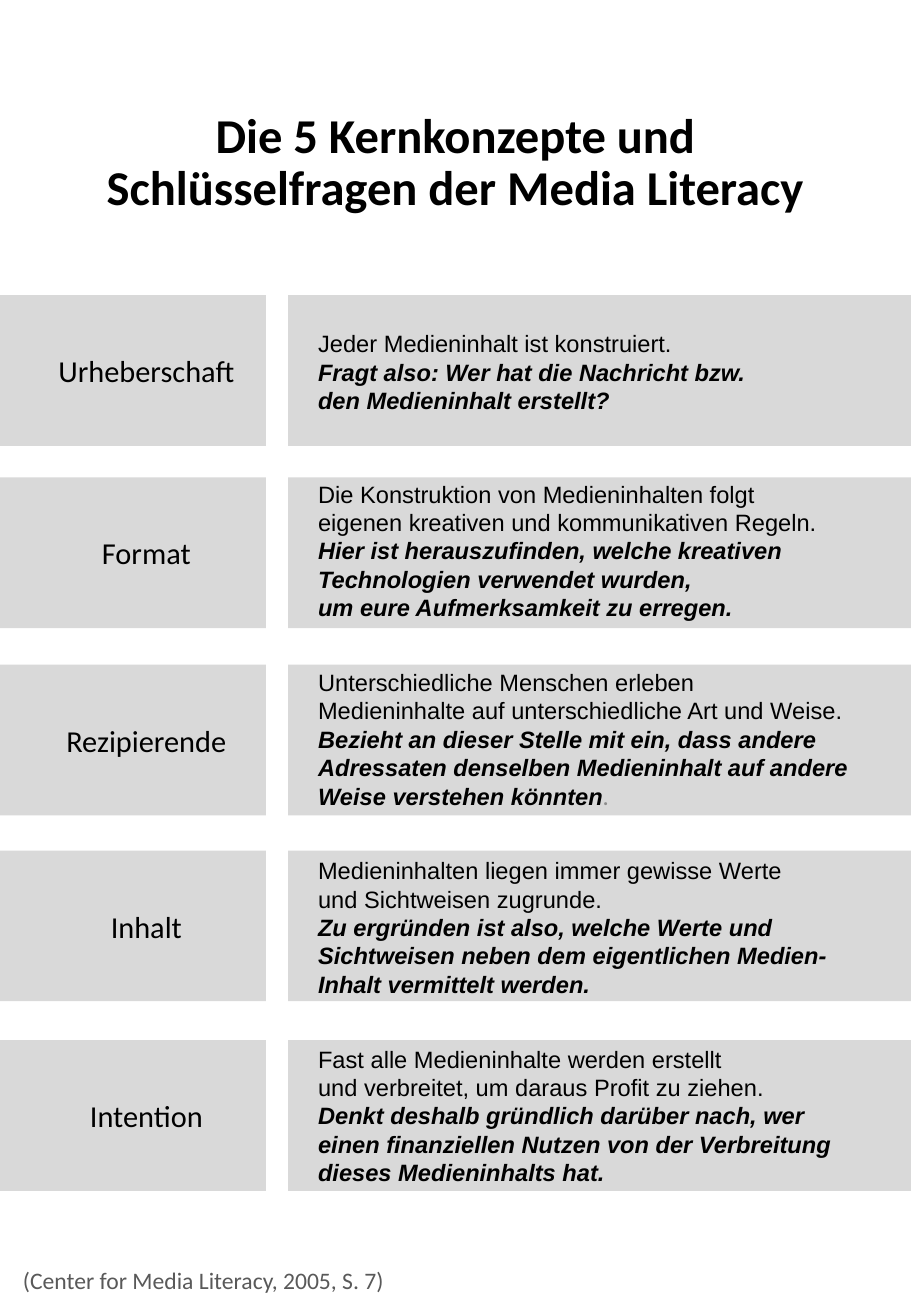
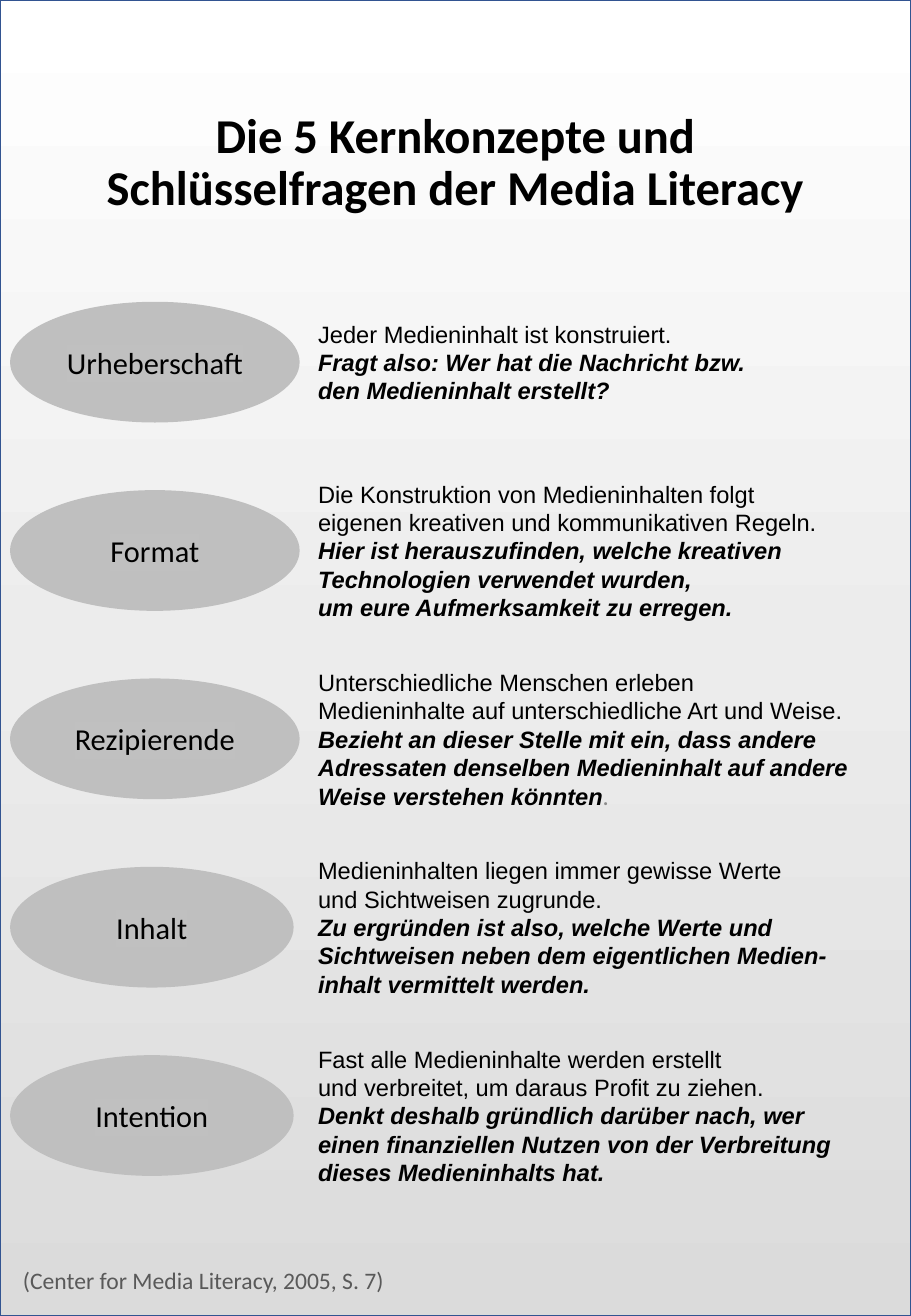
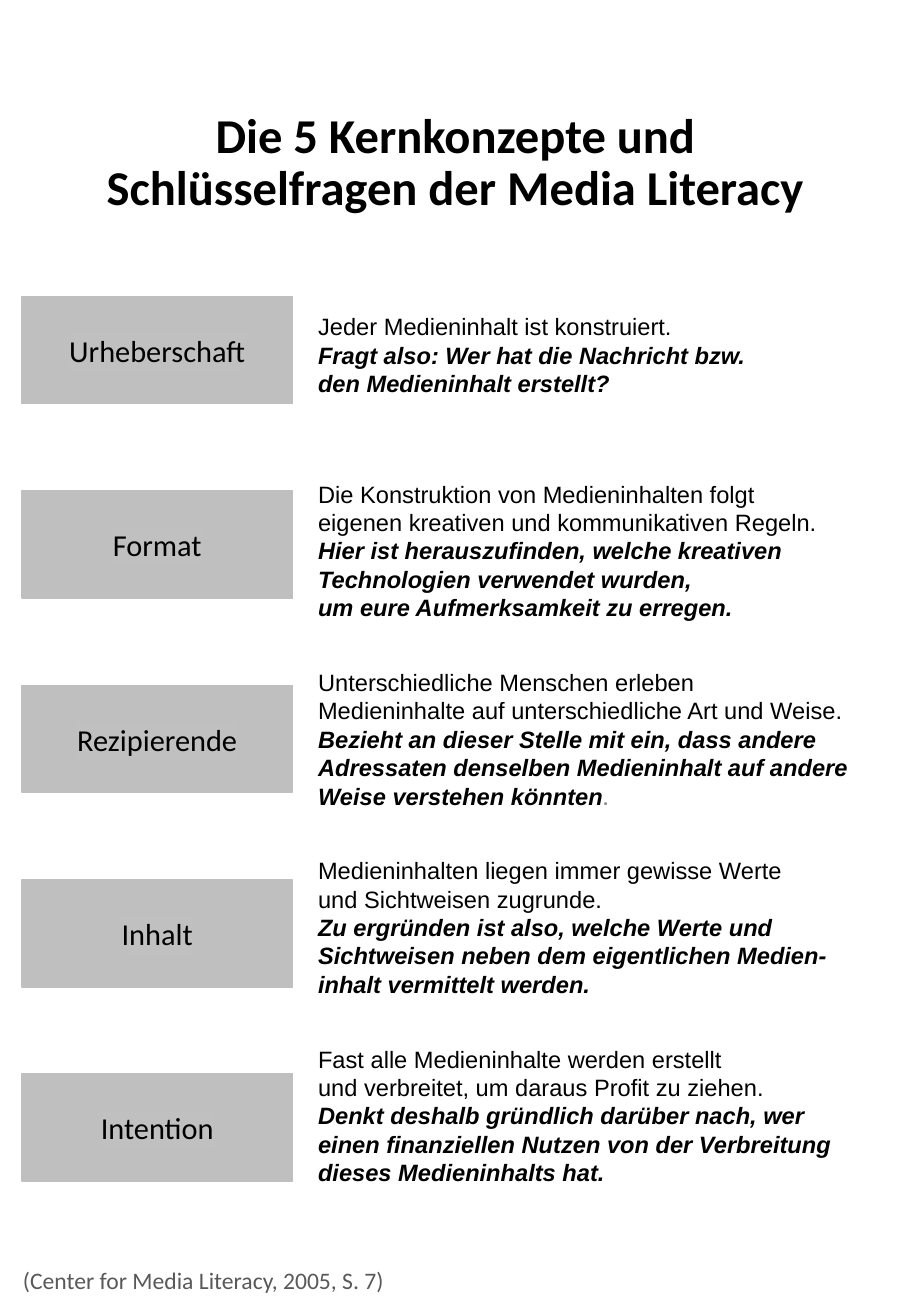
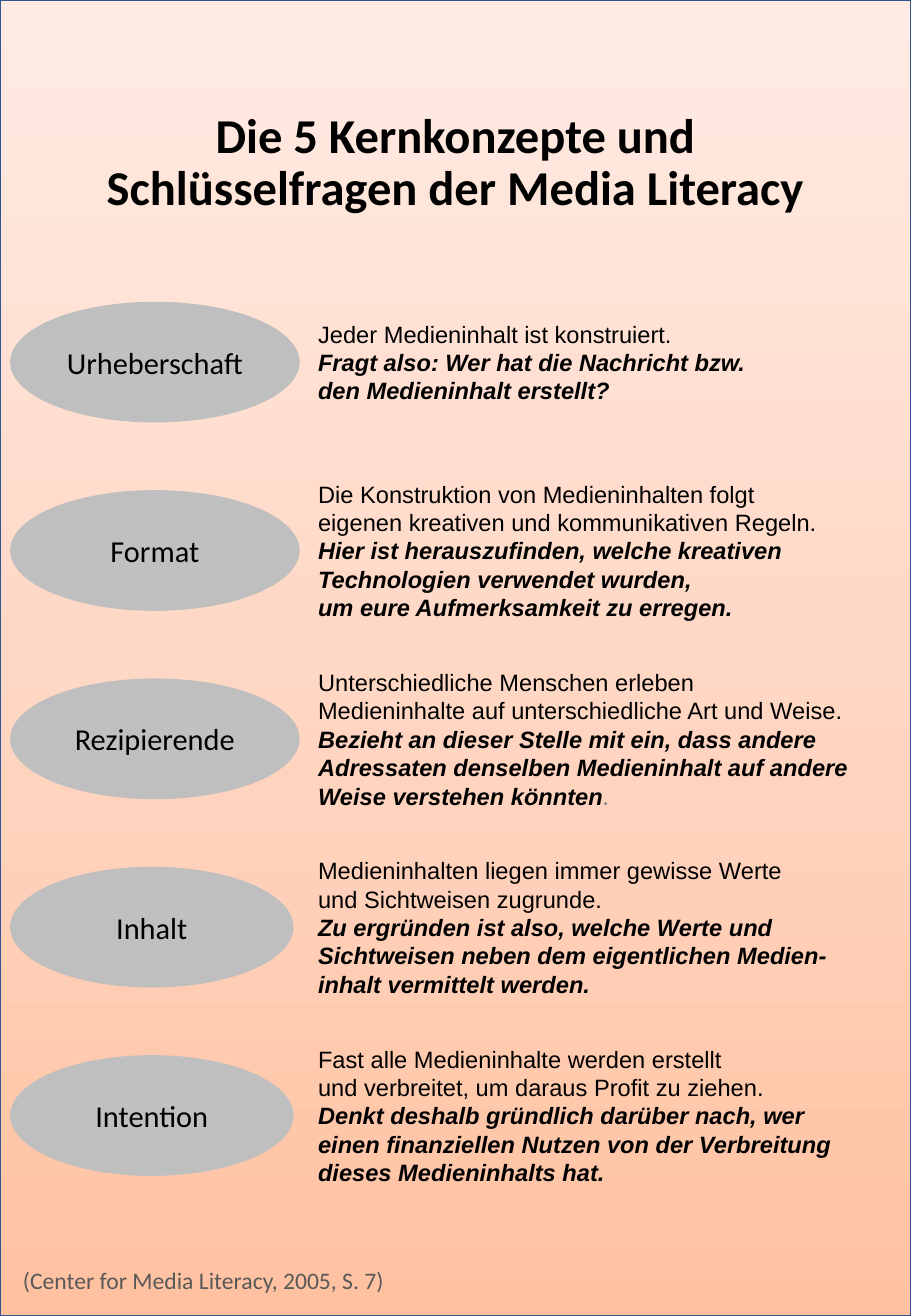
from dataclasses import dataclass

from lxml.etree import SubElement
from pptx import Presentation
from pptx.dml.color import RGBColor
from pptx.enum.shapes import MSO_SHAPE
from pptx.enum.text import MSO_ANCHOR, MSO_AUTO_SIZE, PP_ALIGN
from pptx.oxml.ns import qn
from pptx.util import Emu, Pt

PX = 9144  # 100 px to the inch
SLIDE_W, SLIDE_H = 750, 1083


@dataclass(frozen=True)
class Theme:
    heading_font: str = "Calibri"
    body_font: str = "Arial"
    title_size: float = 28.8
    label_size: int = 18
    body_size: int = 14
    stop_size: int = 12
    black: str = "000000"
    white: str = "FFFFFF"
    source: str = "595959"
    stop: str = "8C8C8C"
    band: str = "D9D9D9"
    label: str = "BFBFBF"
    highlight: str = "C0C0C0"
    frame: str = "325491"
    gray: tuple = ("DBDBDB", "ECECEC", "FFFFFF")
    peach: tuple = ("FFC1A0", "FFD8C5", "FFEBE3")


T = Theme()

TITLE = "Die 5 Kernkonzepte und Schlüsselfragen der Media Literacy"
SOURCE = "(Center for Media Literacy, 2005, S. 7)"

# Label, statement lines, question lines
CONCEPTS = [
    ("Urheberschaft",
     ["Jeder Medieninhalt ist konstruiert."],
     ["Fragt also: Wer hat die Nachricht bzw.",
      "den Medieninhalt erstellt?"]),
    ("Format",
     ["Die Konstruktion von Medieninhalten folgt",
      "eigenen kreativen und kommunikativen Regeln."],
     ["Hier ist herauszufinden, welche kreativen",
      "Technologien verwendet wurden,",
      "um eure Aufmerksamkeit zu erregen."]),
    ("Rezipierende",
     ["Unterschiedliche Menschen erleben",
      "Medieninhalte auf unterschiedliche Art und Weise."],
     ["Bezieht an dieser Stelle mit ein, dass andere",
      "Adressaten denselben Medieninhalt auf andere",
      "Weise verstehen könnten"]),
    ("Inhalt",
     ["Medieninhalten liegen immer gewisse Werte",
      "und Sichtweisen zugrunde."],
     ["Zu ergründen ist also, welche Werte und",
      "Sichtweisen neben dem eigentlichen Medien-",
      "inhalt vermittelt werden."]),
    ("Intention",
     ["Fast alle Medieninhalte werden erstellt",
      "und verbreitet, um daraus Profit zu ziehen."],
     ["Denkt deshalb gründlich darüber nach, wer",
      "einen finanziellen Nutzen von der Verbreitung",
      "dieses Medieninhalts hat."]),
]
LABELS = [label for label, _, _ in CONCEPTS]

# Row positions
BAND_TOPS = [243, 393, 547, 700, 856]
BAND_H = 124
TEXT_TOP, ROW_STEP = 254, 155
BOX_TOP, BOX_STEP = 244, 160
ELLIPSE_TOP = 249
ELLIPSE_WIDTHS = [237, 237, 237, 232, 232]


def px(*lengths):
    return [Emu(n * PX) for n in lengths]


def rgb(value):
    return RGBColor.from_string(value)


def style(r, size, color=T.black, font=T.heading_font, bold=False, italic=False):
    r.font.size, r.font.name = Pt(size), font
    r.font.bold, r.font.italic = bold, italic
    r.font.color.rgb = rgb(color)


def add_text(s, box, lines, anchor=MSO_ANCHOR.TOP, align=PP_ALIGN.LEFT):
    """Add a text box with one paragraph per line and return its paragraphs."""
    tf = s.shapes.add_textbox(*px(*box)).text_frame
    tf.word_wrap = True
    tf.vertical_anchor = anchor
    tf.text = "\n".join(lines)
    for p in tf.paragraphs:
        p.alignment = align
    return tf.paragraphs


def add_block(s, kind, box, fill=None, line=None):
    sp = s.shapes.add_shape(kind, *px(*box))
    sp.shadow.inherit = False
    if fill:
        sp.fill.solid()
        sp.fill.fore_color.rgb = rgb(fill)
    if line:
        sp.line.color.rgb = rgb(line)
        sp.line.width = Pt(1)
    else:
        sp.line.fill.background()
    return sp


def add_label(s, kind, box, label):
    """Add a gray shape holding a highlighted concept name."""
    tf = add_block(s, kind, box, T.label, T.label).text_frame
    tf.text = label
    tf.vertical_anchor = MSO_ANCHOR.MIDDLE
    p = tf.paragraphs[0]
    p.alignment = PP_ALIGN.CENTER
    r = p.runs[0]
    style(r, T.label_size)
    fill = r.font.fill._xPr.find(qn("a:solidFill"))
    highlight = SubElement(fill.getparent(), qn("a:highlight"))
    SubElement(highlight, qn("a:srgbClr"), val=T.highlight)
    fill.addnext(highlight)


def add_backdrop(s, colors):
    """Add a framed gradient behind the title, running from bottom to top."""
    sp = add_block(s, MSO_SHAPE.RECTANGLE, (0, 0, SLIDE_W, SLIDE_H), line=T.frame)
    sp.fill.gradient()
    sp.fill.gradient_angle = 90
    stops = next(sp.element.iter(qn("a:gsLst")))
    for stop in list(stops):
        stops.remove(stop)
    for i, color in enumerate(colors):
        stop = SubElement(stops, qn("a:gs"), pos=str(i * 50000))
        SubElement(stop, qn("a:srgbClr"), val=color)
    s.shapes.title.element.addprevious(sp.element)


def add_concept_texts(s, first_top, capital=False):
    """Add the five texts; the first row has its own height on each design."""
    for i, (label, statement, question) in enumerate(CONCEPTS):
        if capital and label == "Inhalt":
            question = question[:-1] + [question[-1].capitalize()]
        top = TEXT_TOP + i * ROW_STEP if i else first_top
        paragraphs = add_text(s, (252, top, SLIDE_W - 252, 88),
                              statement + question, MSO_ANCHOR.MIDDLE)
        for n, p in enumerate(paragraphs):
            strong = n >= len(statement)
            style(p.runs[0], T.body_size, font=T.body_font, bold=strong, italic=strong)
        if label == "Rezipierende":
            r = paragraphs[-1].add_run()
            r.text = "."
            style(r, T.stop_size, T.stop, bold=True, italic=True)


def add_slide(prs, backdrop=None):
    """Add a slide with the shared title and source line."""
    s = prs.slides.add_slide(prs.slide_layouts[5])
    title = s.shapes.title
    title.left, title.top, title.width, title.height = px(56, 118, 638, 65)
    tf = title.text_frame
    tf.text = TITLE
    tf.auto_size = MSO_AUTO_SIZE.NONE
    tf.vertical_anchor = MSO_ANCHOR.BOTTOM
    p = tf.paragraphs[0]
    p.alignment, p.line_spacing = PP_ALIGN.CENTER, 0.9
    style(p.runs[0], T.title_size, bold=True)
    if backdrop:
        add_backdrop(s, backdrop)
    p = add_text(s, (9, 1037, 508, 46), [SOURCE])[0]
    style(p.runs[0], T.body_size, T.source)
    return s


def band_slide(prs):
    s = add_slide(prs)
    for top in BAND_TOPS:
        add_block(s, MSO_SHAPE.RECTANGLE, (0, top, SLIDE_W, BAND_H), T.band)
    add_concept_texts(s, 262, capital=True)
    for top, label in zip(BAND_TOPS, LABELS):
        p = add_text(s, (0, top, 241, BAND_H), [label],
                     MSO_ANCHOR.MIDDLE, PP_ALIGN.CENTER)[0]
        style(p.runs[0], T.label_size)
    # White gap between labels and texts
    height = BAND_TOPS[-1] + BAND_H - BAND_TOPS[0]
    add_block(s, MSO_SHAPE.RECTANGLE, (219, BAND_TOPS[0], 18, height), T.white)


def ellipse_slide(prs, backdrop):
    s = add_slide(prs, backdrop)
    add_concept_texts(s, TEXT_TOP)
    for i, (label, width) in enumerate(zip(LABELS, ELLIPSE_WIDTHS)):
        add_label(s, MSO_SHAPE.OVAL, (9, ELLIPSE_TOP + i * ROW_STEP, width, 98), label)


def box_slide(prs):
    s = add_slide(prs)
    add_concept_texts(s, 248)
    for i, label in enumerate(LABELS):
        add_label(s, MSO_SHAPE.RECTANGLE, (18, BOX_TOP + i * BOX_STEP, 223, 88), label)


def main():
    prs = Presentation()
    prs.slide_width, prs.slide_height = px(SLIDE_W, SLIDE_H)
    band_slide(prs)
    ellipse_slide(prs, T.gray)
    box_slide(prs)
    ellipse_slide(prs, T.peach)
    prs.save("out.pptx")


if __name__ == "__main__":
    main()
